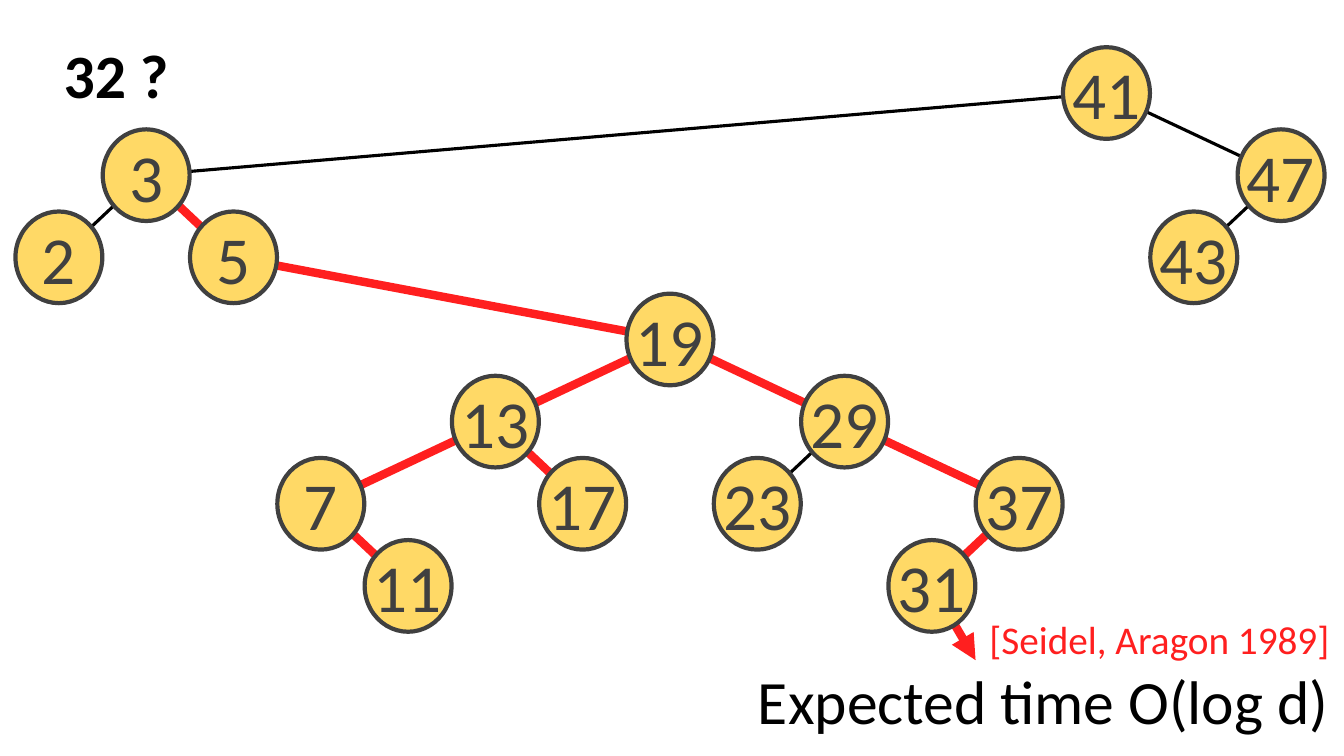
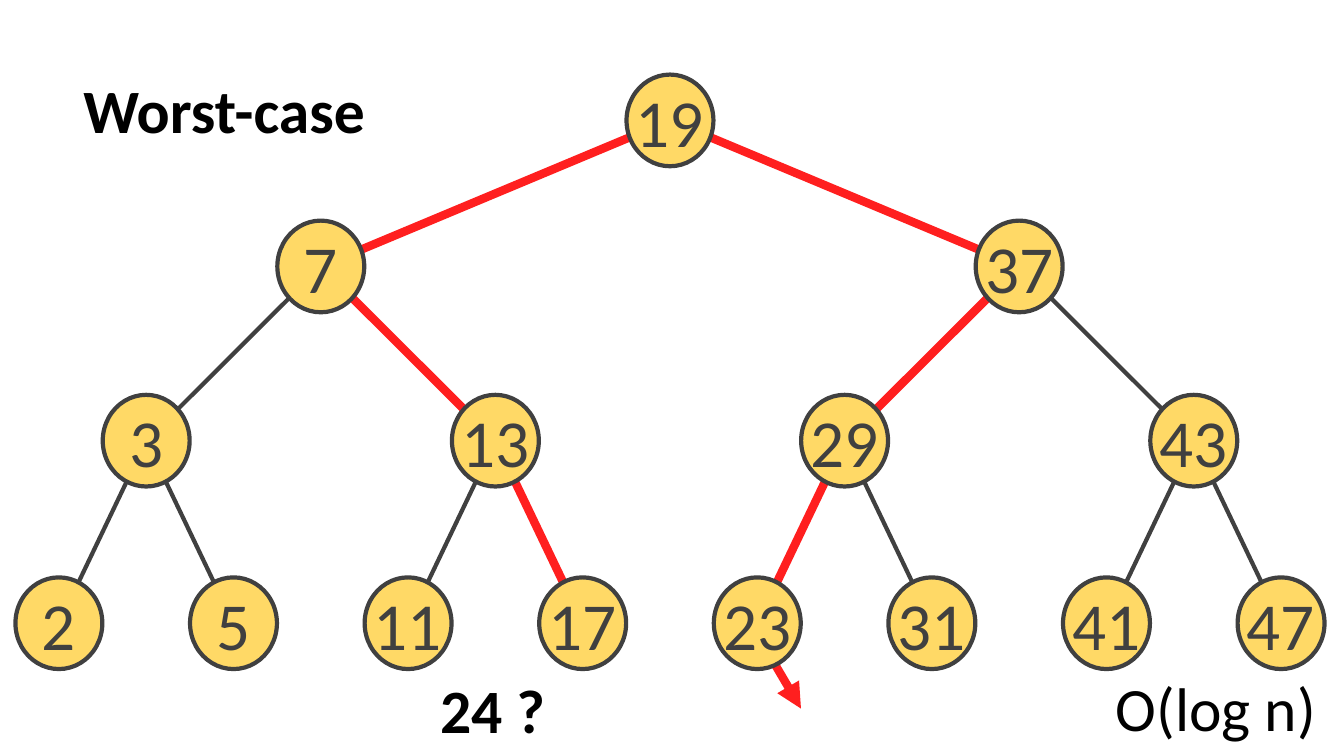
from lxml import etree
from pptx import Presentation
from pptx.dml.color import RGBColor
from pptx.enum import shapes, text
from pptx.oxml.ns import qn
from pptx.util import Cm, Pt

FONT = "Calibri"
BLACK, GREY, RED, YELLOW = "000000", "404040", "FF1F1F", "FFD966"
KEYS = [2, 3, 5, 7, 11, 13, 17, 19, 23, 29, 31, 37, 41, 43, 47]
NODE_W, NODE_H = 2.19, 2.31
COLUMN = 2.2
TREE_LEFT = 0.39
ARROW_DX, ARROW_DY = 1.1, 1.87
LEFT, CENTER, RIGHT = (text.PP_ALIGN.LEFT, text.PP_ALIGN.CENTER,
                       text.PP_ALIGN.RIGHT)
MIDDLE, TOP = text.MSO_ANCHOR.MIDDLE, text.MSO_ANCHOR.TOP


def rgb(value):
    return RGBColor.from_string(value)


def set_all(obj, **values):
    for name, value in values.items():
        setattr(obj, name, value)


def write(sp, lines, align=LEFT, anchor=MIDDLE, spacing=0.9, **frame):
    """Fill a shape with (text, size, colour, bold) lines."""
    tf = sp.text_frame
    set_all(tf, **{"auto_size": text.MSO_AUTO_SIZE.NONE, "word_wrap": True,
                   "vertical_anchor": anchor, **frame})
    for i, (words, size, color, bold) in enumerate(lines):
        p = tf.add_paragraph() if i else tf.paragraphs[0]
        set_all(p, alignment=align, line_spacing=spacing)
        r = p.add_run()
        r.text = words
        set_all(r.font, name=FONT, size=Pt(size), bold=bold)
        r.font.color.rgb = rgb(color)


def title(s, box, words, align=LEFT, bold=False):
    sp = s.shapes.title
    set_all(sp, **dict(zip(("left", "top", "width", "height"), map(Cm, box))))
    write(sp, [(words, 44, BLACK, bold)], align)


def label(s, box, lines, **layout):
    write(s.shapes.add_textbox(*map(Cm, box)), lines, **layout)


def line(s, start, end, color, width, arrow=False):
    c = s.shapes.add_connector(shapes.MSO_CONNECTOR.STRAIGHT,
                               *map(Cm, (*start, *end)))
    c.line.color.rgb = rgb(color)
    c.line.width = Pt(width)
    if arrow:
        etree.SubElement(c.line._get_or_add_ln(), qn("a:tailEnd"),
                         type="triangle")
    etree.SubElement(c._element.spPr, qn("a:effectLst"))


def node(s, center, key):
    x, y = center
    sp = s.shapes.add_shape(
        shapes.MSO_SHAPE.OVAL,
        *map(Cm, (x - NODE_W / 2, y - NODE_H / 2, NODE_W, NODE_H)))
    sp.shadow.inherit = False
    sp.fill.solid()
    sp.fill.fore_color.rgb = rgb(YELLOW)
    sp.line.color.rgb = rgb(GREY)
    sp.line.width = Pt(3)
    write(sp, [(str(key), 48, GREY, False)], CENTER, spacing=1.0,
          word_wrap=False, margin_left=0, margin_right=0,
          margin_top=0, margin_bottom=0)


def search_tree(s, top, rows, parents, visited, edge, last, drop=0):
    """Draw a tree: columns follow key order, rows follow depth.

    parents maps each key to its parent, visited holds the lower ends of the
    red edges, and the arrow leaves the key last, starting drop below centre.
    """
    def depth(key):
        return 1 + depth(parents[key]) if key in parents else 0

    centers = {key: (TREE_LEFT + NODE_W / 2 + COLUMN * i,
                     top + NODE_H / 2 + rows[depth(key)])
               for i, key in enumerate(KEYS)}
    for key in sorted(parents, key=lambda k: k in visited):
        style = (RED, 6) if key in visited else edge
        line(s, centers[parents[key]], centers[key], *style)
    x, y = centers[last]
    line(s, (x, y + drop), (x + ARROW_DX, y + drop + ARROW_DY), RED, 6, True)
    for key, center in centers.items():
        node(s, center, key)


def finger_search_slide(s):
    title(s, (1.35, 0.15, 29.21, 3.68), "32 ?", bold=True)
    parents = {3: 41, 47: 41, 2: 3, 5: 3, 43: 47, 19: 5, 13: 19, 29: 19,
               7: 13, 17: 13, 11: 7, 23: 29, 37: 29, 31: 37}
    search_tree(s, 1.19, [2.07 * i for i in range(7)], parents,
                {5, 19, 13, 29, 7, 11, 17, 37, 31}, (BLACK, 2.25), last=31)
    label(s, (16.48, 15.39, 17.27, 3.33),
          [("[Seidel, Aragon 1989]", 28, RED, False),
           ("Expected time O(log d)", 44, BLACK, False)],
          align=RIGHT, anchor=TOP, spacing=1.0)


def worst_case_slide(s):
    title(s, (27.58, 16.87, 5.84, 2.11), "O(log n)", RIGHT)
    parents = {7: 19, 37: 19, 3: 7, 13: 7, 29: 37, 43: 37, 2: 3, 5: 3,
               11: 13, 17: 13, 23: 29, 31: 29, 41: 43, 47: 43}
    search_tree(s, 1.88, [0, 3.68, 8.07, 12.67], parents,
                {7, 13, 17, 37, 29, 23}, (GREY, 3), last=23, drop=0.28)
    label(s, (1.85, 1.02, 16.87, 3.68), [("Worst-case", 44, BLACK, True)])
    label(s, (10.84, 16.15, 3.3, 3.68), [("24 ?", 44, BLACK, True)],
          word_wrap=False)


def main():
    prs = Presentation()
    prs.slide_width, prs.slide_height = Cm(33.87), Cm(19.05)
    for build in (finger_search_slide, worst_case_slide):
        build(prs.slides.add_slide(prs.slide_layouts[5]))
    prs.save("out.pptx")


if __name__ == "__main__":
    main()
